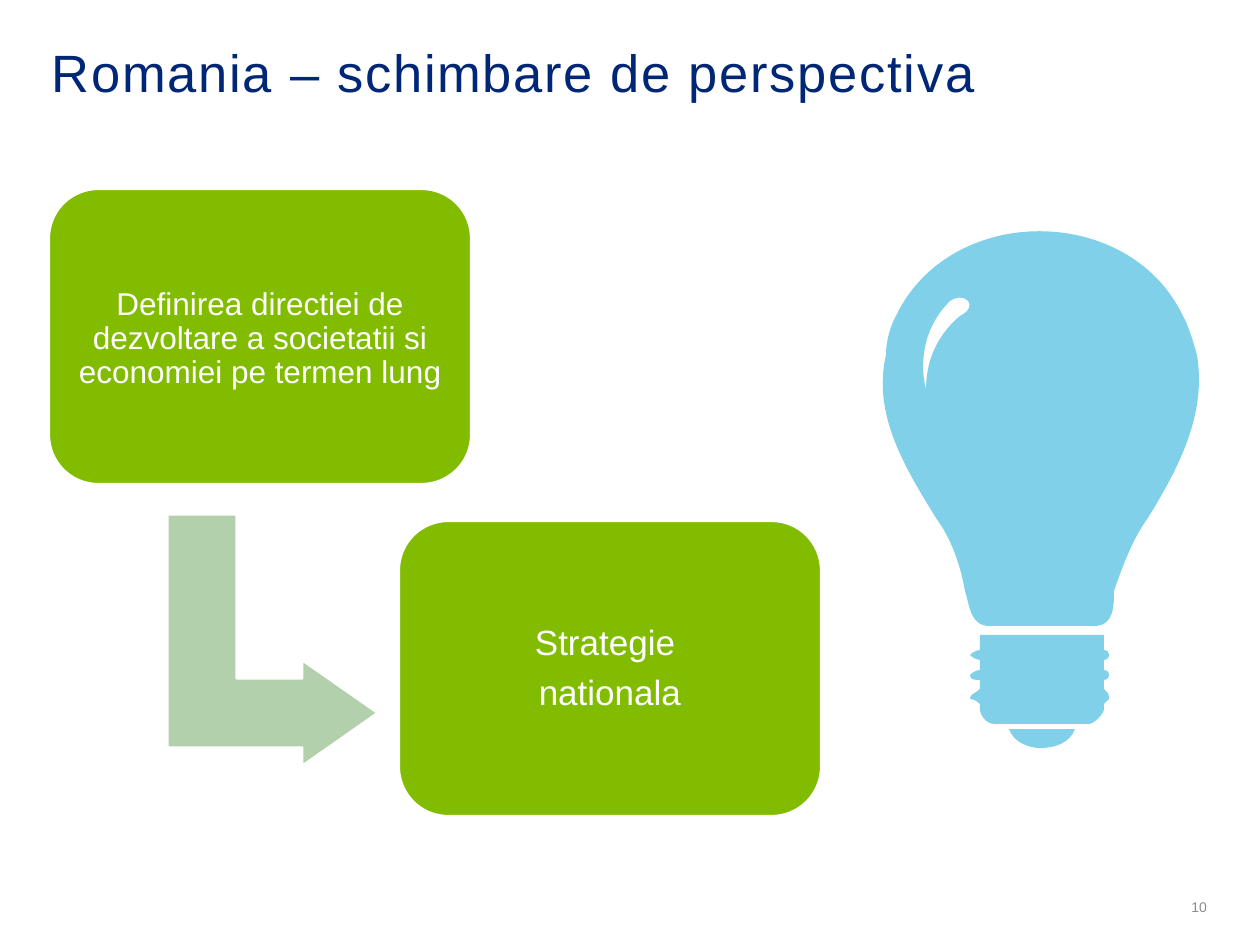
import pptx
import pptx.util
import pptx.dml.color
import pptx.enum.shapes
import pptx.enum.text
import pptx.oxml.ns
import lxml.etree

RGBColor = pptx.dml.color.RGBColor
MSO_SHAPE = pptx.enum.shapes.MSO_SHAPE
ALIGN = pptx.enum.text.PP_ALIGN
ANCHOR = pptx.enum.text.MSO_ANCHOR
qn = pptx.oxml.ns.qn

NAVY = RGBColor(0x00, 0x27, 0x76)
GREEN = RGBColor(0x81, 0xBC, 0x00)
PALE_GREEN = RGBColor(0xB1, 0xD0, 0xAB)
SKY = RGBColor(0x7F, 0xD0, 0xE8)
GREY = RGBColor(0x8C, 0x8C, 0x8C)
WHITE = RGBColor(0xFF, 0xFF, 0xFF)

PX = 914400 / 126

GLASS = [
    (168, 423), (222, 423), (242, 423, 242, 403, 242, 388),
    (252, 359, 262, 334, 276, 315), (306, 266, 335, 212, 325, 152),
    (321, 137, 316, 122, 311, 113), (257, 0, 78, 0, 24, 113),
    (19, 122, 14, 137, 14, 152), (0, 212, 34, 266, 64, 315),
    (78, 334, 88, 359, 93, 388), (98, 403, 98, 423, 118, 423),
    (168, 423),
]
GLINT = [
    (54, 186), (54, 186, 39, 137, 78, 98), (93, 88, 108, 103, 88, 113),
    (54, 142, 54, 176, 54, 191), (54, 191, 54, 186, 54, 186),
]
SCREW = [
    (237, 472), (237, 472, 237, 467, 232, 467), (232, 457),
    (237, 457, 237, 452, 237, 452), (237, 452, 237, 447, 232, 447),
    (232, 432), (168, 432), (108, 432), (108, 447),
    (103, 447, 98, 452, 98, 452), (98, 452, 103, 457, 108, 457), (108, 467),
    (103, 467, 98, 472, 98, 472), (98, 477, 103, 477, 108, 477),
    (108, 486), (103, 491, 98, 491, 98, 496),
    (98, 496, 103, 496, 108, 501), (108, 506),
    (108, 511, 113, 521, 123, 521), (168, 521), (217, 521),
    (222, 521, 232, 511, 232, 506), (232, 501), (237, 496),
    (237, 491, 237, 491, 232, 486), (232, 477),
    (237, 477, 237, 472, 237, 472),
]
CAP = [
    (137, 526), (203, 526), (198, 540, 183, 545, 168, 545),
    (158, 545, 142, 540, 137, 526),
]


def emu(*lengths):
    return [pptx.util.Emu(round(length * PX)) for length in lengths]


def write(holder, *lines, size, color, align=ALIGN.LEFT, anchor=ANCHOR.TOP,
          inset=0, drop=0, line_spacing=1.0, space_after=0, tracking=0):
    frame = holder.text_frame
    frame.word_wrap = True
    frame.vertical_anchor = anchor
    frame.margin_left = frame.margin_right = emu(inset)[0]
    frame.margin_top, frame.margin_bottom = emu(inset + drop, inset)
    for index, line in enumerate(lines):
        paragraph = frame.paragraphs[0] if index == 0 else frame.add_paragraph()
        paragraph.alignment = align
        paragraph.line_spacing = line_spacing
        paragraph.space_after = pptx.util.Pt(space_after)
        run = paragraph.add_run()
        run.text = line
        run.font.name = "Arial"
        run.font.size = pptx.util.Pt(size)
        run.font.color.rgb = color
        if tracking:
            run.font._element.set("spc", str(tracking * 100))


def paint(shape, fill, outline=None):
    shape.shadow.inherit = False
    shape.fill.solid()
    shape.fill.fore_color.rgb = fill
    if outline is None:
        shape.line.fill.background()
    else:
        shape.line.color.rgb = outline
        shape.line.width = pptx.util.Pt(1.25)


def add_title(slide, box):
    title = slide.shapes.add_textbox(*emu(*box))
    write(title, "Romania – schimbare de perspectiva", size=30, color=NAVY,
          line_spacing=0.8, tracking=1)


def add_page_number(slide, box):
    number = slide.shapes.add_textbox(*emu(*box))
    write(number, "10", size=8, color=GREY, align=ALIGN.RIGHT,
          anchor=ANCHOR.MIDDLE)


def add_step(process, box, *lines, size, inset, drop):
    step = process.shapes.add_shape(MSO_SHAPE.ROUNDED_RECTANGLE, *emu(*box))
    step.adjustments[0] = 0.167
    paint(step, GREEN, WHITE)
    write(step, *lines, size=size, color=WHITE, align=ALIGN.CENTER,
          anchor=ANCHOR.MIDDLE, inset=inset, drop=drop, line_spacing=0.9,
          space_after=size * 0.35)


def add_process(slide, box):
    left, top, width, height = box
    step_width, step_height = 422, 295
    process = slide.shapes.add_group_shape()
    arrow = process.shapes.add_shape(
        MSO_SHAPE.BENT_UP_ARROW, *emu(left + 98, top + 346, 251, 210))
    arrow.rotation = 90
    for index, ratio in enumerate((0.328, 0.25, 0.358)):
        arrow.adjustments[index] = ratio
    paint(arrow, PALE_GREEN, WHITE)
    add_step(process, (left, top, step_width, step_height),
             "Definirea directiei de dezvoltare a societatii si economiei "
             "pe termen lung", size=18, inset=9, drop=6)
    add_step(process, (left + width - step_width, top + height - step_height,
                       step_width, step_height),
             "Strategie ", "nationala", size=20, inset=10, drop=2)


def control_points(contour, left, top):
    for segment in contour:
        coordinates = segment * 3 if len(segment) == 2 else segment
        for x, y in zip(coordinates[::2], coordinates[1::2]):
            yield emu(left + x, top + y)


def bend_lines(outline):
    lines = list(outline._element.iter(qn("a:lnTo")))
    for first, second, third in zip(lines[::3], lines[1::3], lines[2::3]):
        curve = lxml.etree.Element(qn("a:cubicBezTo"))
        first.addprevious(curve)
        for line in (first, second, third):
            curve.append(line[0])
            line.getparent().remove(line)


def add_bulb(slide, box):
    left, top = box[:2]
    bulb = slide.shapes.add_group_shape()
    for contours in ((CAP,), (GLASS, GLINT), (SCREW,)):
        builder = bulb.shapes.build_freeform(
            *emu(left + contours[0][0][0], top + contours[0][0][1]))
        for index, (start, *segments) in enumerate(contours):
            if index:
                builder.move_to(*emu(left + start[0], top + start[1]))
            builder.add_line_segments(
                list(control_points(segments, left, top)), close=True)
        outline = builder.convert_to_shape()
        bend_lines(outline)
        paint(outline, SKY)


def main():
    deck = pptx.Presentation()
    deck.slide_width, deck.slide_height = emu(1260, 945)
    slide = deck.slides.add_slide(deck.slide_layouts[6])
    add_page_number(slide, (1098, 889, 109, 35))
    add_title(slide, (52, 52, 1155, 92))
    add_bulb(slide, (872, 203, 336, 545))
    add_process(slide, (49, 189, 772, 627))
    deck.save("out.pptx")


if __name__ == "__main__":
    main()
